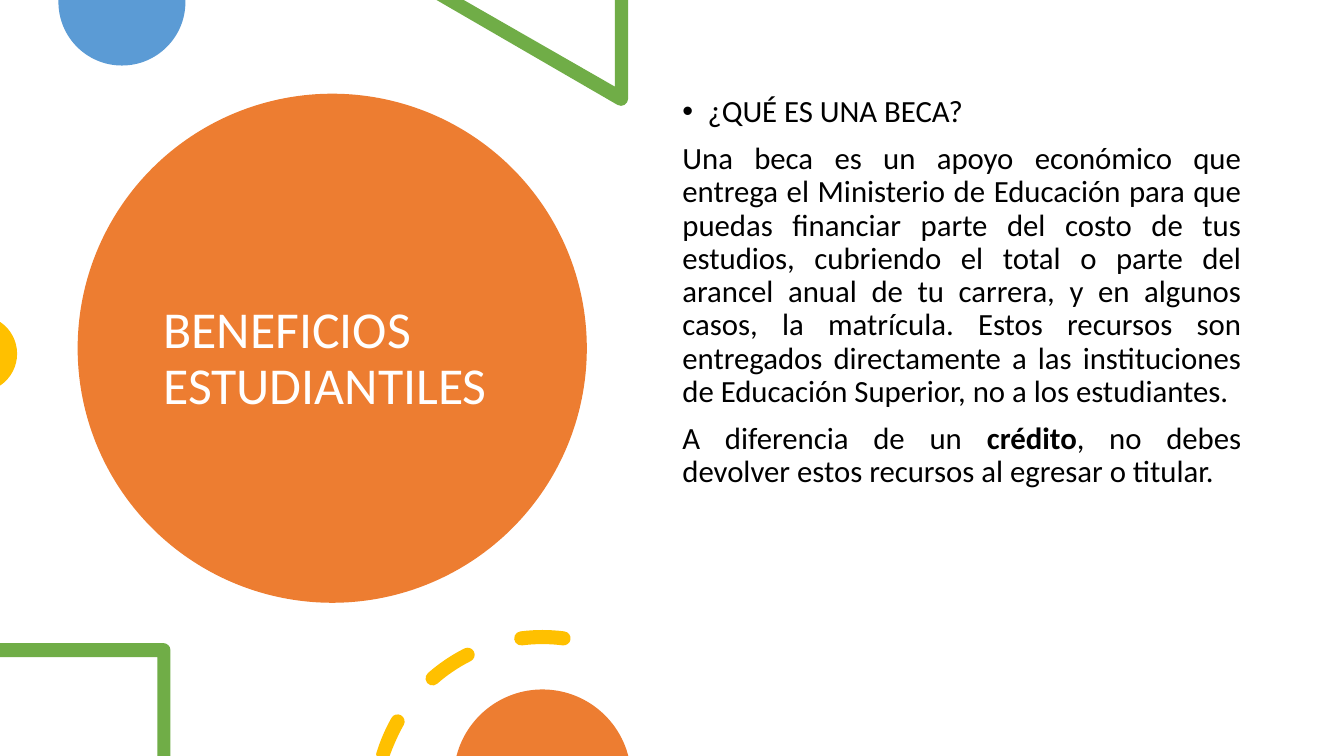
"""Build the slide on student benefits, with its frame of geometric ornaments."""
import math

import lxml.etree
import pptx
import pptx.dml.color
import pptx.enum.shapes
import pptx.enum.text
import pptx.oxml.ns
import pptx.util

Inches = pptx.util.Inches
RGBColor = pptx.dml.color.RGBColor
qn = pptx.oxml.ns.qn
ORANGE = RGBColor(0xED, 0x7D, 0x31)
BLUE = RGBColor(0x5B, 0x9B, 0xD5)
GREEN = RGBColor(0x70, 0xAD, 0x47)
GOLD = RGBColor(0xFF, 0xC0, 0x00)
WHITE = RGBColor(0xFF, 0xFF, 0xFF)
BLACK = RGBColor(0x00, 0x00, 0x00)
WIDTH, HEIGHT = 13.33, 7.5


def arc(x, y, radius, start, stop):
    """Return a start point and Bezier triples along a circle, in degrees clockwise."""
    count = math.ceil(abs(stop - start) / 90)
    turn = math.radians(stop - start) / count
    reach = 4 / 3 * math.tan(turn / 4)
    steps = [((x + radius * math.cos(math.radians(start)),
               y + radius * math.sin(math.radians(start))),)]
    for i in range(count):
        a = math.radians(start) + turn * i
        b = a + turn
        offsets = [
            (math.cos(a) - reach * math.sin(a), math.sin(a) + reach * math.cos(a)),
            (math.cos(b) + reach * math.sin(b), math.sin(b) - reach * math.cos(b)),
            (math.cos(b), math.sin(b))]
        steps.append(tuple((x + radius * dx, y + radius * dy) for dx, dy in offsets))
    return steps


def add_outline(page, contours, color):
    """Draw closed contours of points and Bezier triples as one filled shape."""
    builder = None
    for contour in contours:
        points = [(Inches(x), Inches(min(y, HEIGHT))) for step in contour for x, y in step]
        if builder is None:
            builder = page.shapes.build_freeform(*points[0])
        else:
            builder.move_to(*points[0])
        builder.add_line_segments(points[1:], close=True)
    shape = builder.convert_to_shape()
    shape.shadow.inherit = False
    shape.fill.solid()
    shape.fill.fore_color.rgb = color
    shape.line.fill.background()
    outline = shape.element.find(".//" + qn("a:path"))
    nodes = iter([node for node in outline if node.tag != qn("a:close")])
    for step in [step for contour in contours for step in contour]:
        group = [next(nodes) for _ in step]
        if len(group) == 3:
            curve = lxml.etree.Element(qn("a:cubicBezTo"))
            group[0].addprevious(curve)
            for node in group:
                curve.append(node[0])
                outline.remove(node)


deck = pptx.Presentation()
deck.slide_width, deck.slide_height = Inches(WIDTH), Inches(HEIGHT)
page = deck.slides.add_slide(deck.slide_layouts[5])

circle = page.shapes.add_shape(
    pptx.enum.shapes.MSO_SHAPE.OVAL, Inches(0.77), Inches(0.93), Inches(5.05), Inches(5.05))
circle.shadow.inherit = False
circle.fill.solid()
circle.fill.fore_color.rgb = ORANGE
circle.line.fill.background()
page.shapes.element.insert(2, circle.element)

title = page.shapes.title
title.left, title.top = Inches(1.52), Inches(1.34)
title.width, title.height = Inches(3.54), Inches(4.45)
title.text_frame.text = "BENEFICIOS ESTUDIANTILES"
title.text_frame.word_wrap = True
title.text_frame.auto_size = pptx.enum.text.MSO_AUTO_SIZE.NONE
title.text_frame.vertical_anchor = pptx.enum.text.MSO_ANCHOR.MIDDLE
heading = title.text_frame.paragraphs[0]
heading.alignment = pptx.enum.text.PP_ALIGN.LEFT
heading.line_spacing = 0.9
heading.font.name = "Calibri"
heading.font.size = pptx.util.Pt(37)
heading.font.color.rgb = WHITE

add_outline(page, [[((1.84, 0),), ((0.58, 0),)] + arc(1.21, 0.02, 0.63, 180, 0)], BLUE)
add_outline(page, [
    [((4.33, 0),), ((4.6, 0),), ((6.1, 0.86),), ((6.1, 0),), ((6.23, 0),)]
    + arc(6.16, 0.98, 0.07, 0, 120)], GREEN)
add_outline(page, [arc(-0.21, 3.51, 0.38, -56, 56)], GOLD)
add_outline(page, [
    [((0, 6.38),)] + arc(1.62, 6.45, 0.07, -90, 0)
    + [((1.69, 7.5),), ((1.56, 7.5),), ((1.56, 6.52),), ((0, 6.52),)]], GREEN)

ring_x, ring_y, ring_radius, half_stroke = 5.38, 7.97, 1.65, 0.07
dashes = []
for start, stop in [(196.5, 209.5), (228.7, 243.3), (262.7, 277.3)]:
    tail = arc(ring_x, ring_y, ring_radius, start, stop)[0][0]
    head = arc(ring_x, ring_y, ring_radius, stop, start)[0][0]
    dashes.append(
        arc(ring_x, ring_y, ring_radius + half_stroke, start, stop)
        + arc(*head, half_stroke, stop, stop + 180)[1:]
        + arc(ring_x, ring_y, ring_radius - half_stroke, stop, start)[1:]
        + arc(*tail, half_stroke, start + 180, start + 360)[1:])
add_outline(page, dashes, GOLD)
add_outline(page, [arc(5.38, 7.72, 0.88, 194.5, 345.5)], ORANGE)

box = page.shapes.add_textbox(Inches(6.67), Inches(0.9), Inches(5.74), Inches(5.35))
box.text_frame.word_wrap = True
paragraphs = [
    [("¿QUÉ ES UNA BECA?", False)],
    [("Una beca es un apoyo económico que entrega el Ministerio de Educación para que "
      "puedas financiar parte del costo de tus estudios, cubriendo el total o parte del "
      "arancel anual de tu carrera, y en algunos casos, la matrícula. Estos recursos son "
      "entregados directamente a las instituciones de Educación Superior, no a los "
      "estudiantes.", False)],
    [("A diferencia de un ", False), ("crédito", True),
     (", no debes devolver estos recursos al egresar o titular.", False)],
]
for number, spans in enumerate(paragraphs):
    para = box.text_frame.add_paragraph() if number else box.text_frame.paragraphs[0]
    para.line_spacing = 0.9
    para.space_before = pptx.util.Pt(10)
    para.font.name = "Calibri"
    para.font.size = pptx.util.Pt(22)
    para.font.color.rgb = BLACK
    if number:
        para.alignment = pptx.enum.text.PP_ALIGN.JUSTIFY
    for text, bold in spans:
        span = para.add_run()
        span.text = text
        if bold:
            span.font.bold = True

properties = box.text_frame.paragraphs[0]._p.get_or_add_pPr()
properties.set("marL", str(Inches(0.25)))
properties.set("indent", str(Inches(-0.25)))
default_run = properties.find(qn("a:defRPr"))
default_run.addprevious(lxml.etree.Element(qn("a:buFont"), typeface="Arial"))
default_run.addprevious(lxml.etree.Element(qn("a:buChar"), char="•"))

deck.save("out.pptx")
